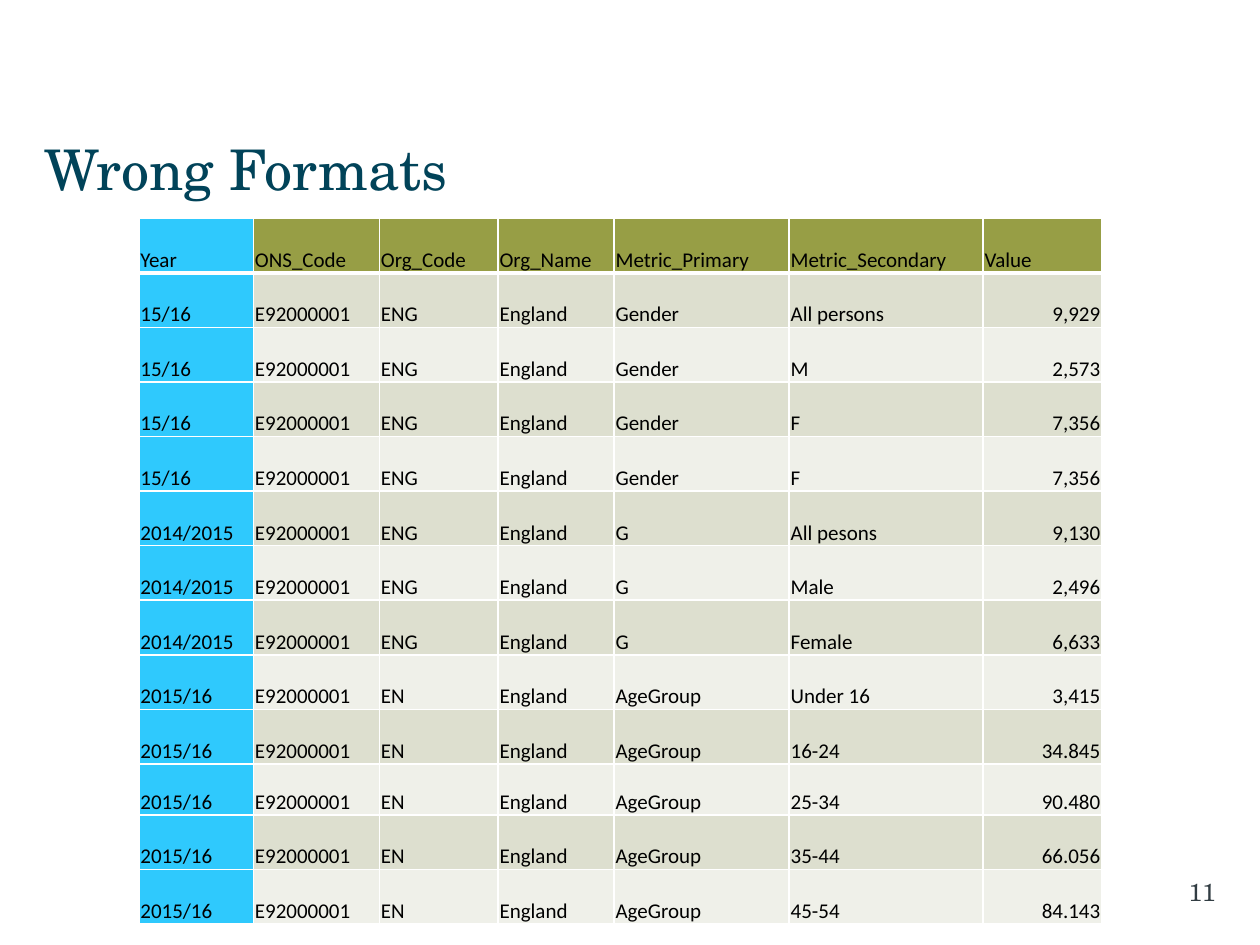
from lxml.etree import SubElement
from pptx import Presentation
from pptx.dml.color import RGBColor
from pptx.enum.text import MSO_ANCHOR as ANCHOR, PP_ALIGN as ALIGN
from pptx.oxml.ns import qn
from pptx.util import Cm, Pt

COLORS = {
    "title": "014359", "number": "323D43", "text": "000000", "border": "FFFFFF",
    "year": "2FC9FD", "header": "979E45", "odd": "DDDFCF", "even": "EFF0E9",
}
HEADERS = ["Year", "ONS_Code", "Org_Code", "Org_Name",
           "Metric_Primary", "Metric_Secondary", "Value"]
# Year, organisation code, primary metric, secondary metric, value
RECORDS = [
    ("15/16", "ENG", "Gender", "All persons", "9,929"),
    ("15/16", "ENG", "Gender", "M", "2,573"),
    ("15/16", "ENG", "Gender", "F", "7,356"),
    ("15/16", "ENG", "Gender", "F", "7,356"),
    ("2014/2015", "ENG", "G", "All pesons", "9,130"),
    ("2014/2015", "ENG", "G", "Male", "2,496"),
    ("2014/2015", "ENG", "G", "Female", "6,633"),
    ("2015/16", "EN", "AgeGroup", "Under 16", "3,415"),
    ("2015/16", "EN", "AgeGroup", "16-24", "34.845"),
    ("2015/16", "EN", "AgeGroup", "25-34", "90.480"),
    ("2015/16", "EN", "AgeGroup", "35-44", "66.056"),
    ("2015/16", "EN", "AgeGroup", "45-54", "84.143"),
]
COL_WIDTHS = [2.31, 2.54, 2.39, 2.34, 3.53, 3.91, 2.39]
ROW_HEIGHTS = [1.1] * 10 + [1.03] + [1.1] * 2


def format_text(tf, font, size, color, align=ALIGN.LEFT):
    p = tf.paragraphs[0]
    p.alignment = align
    r = p.runs[0]
    r.font.name = font
    r.font.size = Pt(size)
    r.font.color.rgb = RGBColor.from_string(COLORS[color])


def set_border(cell, side, width):
    ln = SubElement(cell._tc.get_or_add_tcPr(), qn(f"a:ln{side}"), w=str(Pt(width)))
    fill = SubElement(ln, qn("a:solidFill"))
    SubElement(fill, qn("a:srgbClr"), val=COLORS["border"])


prs = Presentation()
prs.slide_width, prs.slide_height = Cm(25.4), Cm(19.05)
s = prs.slides.add_slide(prs.slide_layouts[6])

# Title and page number: text, box, left and right inset, size, colour, alignment
for text, box, left, right, size, color, align in [
    ("Wrong Formats", (0.89, 2.49, 23.6, 1.8), 0, 0.25, 32, "title", ALIGN.LEFT),
    ("11", (19.63, 17.55, 4.88, 0.86), 0.25, 0, 14, "number", ALIGN.RIGHT),
]:
    tf = s.shapes.add_textbox(*[Cm(v) for v in box]).text_frame
    tf.word_wrap = True
    tf.vertical_anchor = ANCHOR.MIDDLE
    tf.margin_left, tf.margin_right = Cm(left), Cm(right)
    tf.text = text
    format_text(tf, "TeX Gyre Schola", size, color, align)

# Table grid
rows = [HEADERS] + [
    [year, "E92000001", code, "England", primary, secondary, value]
    for year, code, primary, secondary, value in RECORDS
]
table = s.shapes.add_table(
    len(rows), len(HEADERS), Cm(2.8), Cm(4.4),
    Cm(sum(COL_WIDTHS)), Cm(sum(ROW_HEIGHTS))).table
for column, width in zip(table.columns, COL_WIDTHS):
    column.width = Cm(width)
for row, height in zip(table.rows, ROW_HEIGHTS):
    row.height = Cm(height)

# Table cells
for i, values in enumerate(rows):
    band = "header" if i == 0 else "odd" if i % 2 else "even"
    for j, value in enumerate(values):
        cell = table.cell(i, j)
        cell.text_frame.text = value
        is_number = i > 0 and j == len(HEADERS) - 1
        format_text(cell.text_frame, "Calibri", 12, "text",
                    ALIGN.RIGHT if is_number else ALIGN.LEFT)
        cell.vertical_anchor = ANCHOR.BOTTOM
        cell.margin_left = cell.margin_right = cell.margin_top = Cm(0.03)
        cell.margin_bottom = 0
        for side in "LRTB":
            thick = (side == "B" and i == 0) or (side == "T" and i == 1)
            set_border(cell, side, 3 if thick else 1)
        cell.fill.solid()
        cell.fill.fore_color.rgb = RGBColor.from_string(
            COLORS["year" if j == 0 else band])

prs.save("out.pptx")
